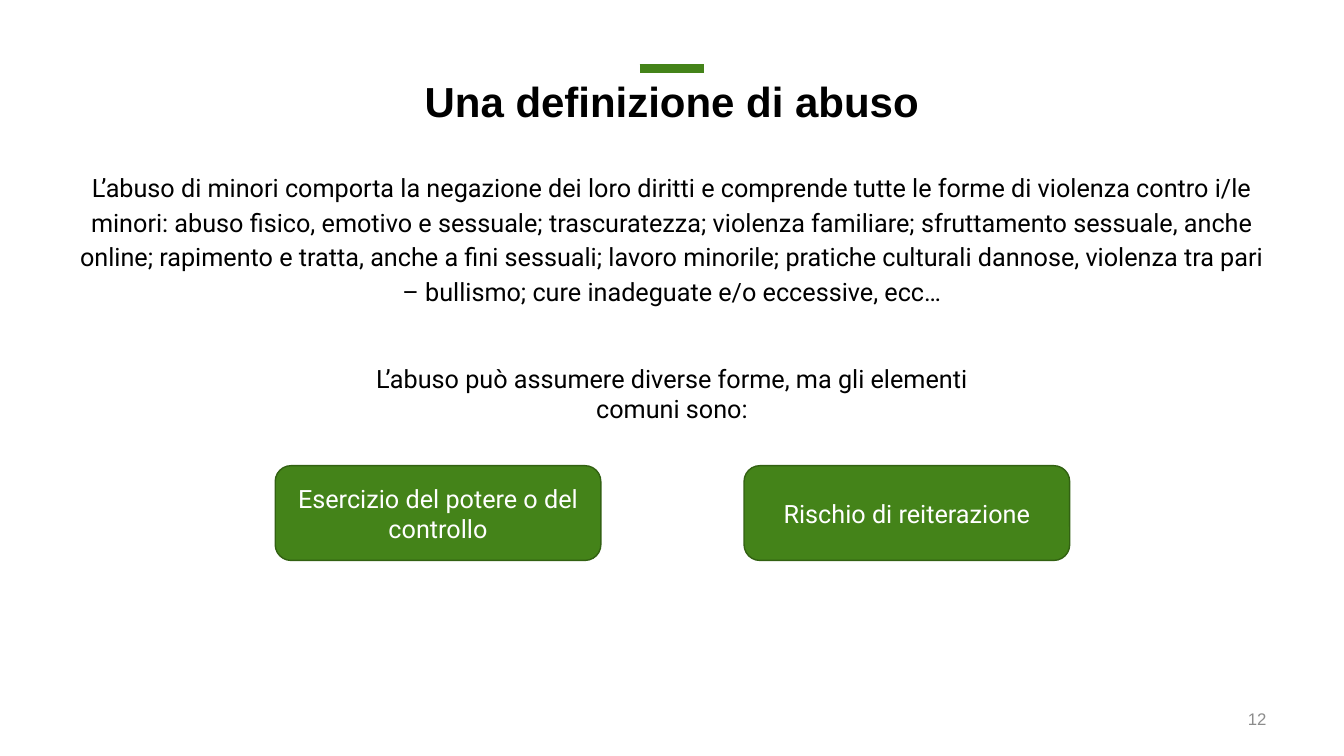
from dataclasses import dataclass

from lxml import etree
from pptx import Presentation
from pptx.dml.color import RGBColor
from pptx.enum import shapes, text
from pptx.oxml.ns import qn
from pptx.util import Inches, Pt


@dataclass(frozen=True)
class Theme:
    green: str = "448319"
    dark_green: str = "326112"
    black: str = "000000"
    white: str = "FFFFFF"
    grey: str = "8C8C8C"
    head_font: str = "Arial"
    body_font: str = "Roboto"
    title_size: int = 30
    body_size: int = 18
    number_size: int = 12


THEME = Theme()
ALIGN = text.PP_ALIGN
ANCHOR = text.MSO_ANCHOR

DEFINITION = (
    "L’abuso di minori comporta la negazione dei loro diritti e comprende tutte le "
    "forme di violenza contro i/le minori: abuso fisico, emotivo e sessuale; "
    "trascuratezza; violenza familiare; sfruttamento sessuale, anche online; "
    "rapimento e tratta, anche a fini sessuali; lavoro minorile; pratiche culturali "
    "dannose, violenza tra pari – bullismo; cure inadeguate e/o eccessive, ecc…"
)
INTRO = "L’abuso può assumere diverse forme, ma gli elementi comuni sono:"
ELEMENTS = ["Esercizio del potere o del controllo", "Rischio di reiterazione"]


def rgb(value):
    return RGBColor.from_string(value)


def write(shape, content, color=THEME.black, size=THEME.body_size,
          font=THEME.body_font, bold=False, align=ALIGN.CENTER, anchor=ANCHOR.TOP):
    """Fill the shape with one formatted paragraph and return it."""
    tf = shape.text_frame
    tf.word_wrap = True
    tf.auto_size = text.MSO_AUTO_SIZE.NONE
    tf.vertical_anchor = anchor
    p = tf.paragraphs[0]
    p.alignment = align
    r = p.add_run()
    r.text = content
    r.font.name = font
    r.font.size = Pt(size)
    r.font.bold = bold
    r.font.color.rgb = rgb(color)
    return p


def add_text(s, box, content, **style):
    sp = s.shapes.add_textbox(*map(Inches, box))
    return sp, write(sp, content, **style)


def add_heading(s, box):
    """Title with a short accent rule centred above it."""
    left, top, width, height = box
    rule_width, rule_y = 0.64, top - 0.08
    rule_left = left + (width - rule_width) / 2
    rule = s.shapes.add_connector(
        shapes.MSO_CONNECTOR.STRAIGHT, Inches(rule_left), Inches(rule_y),
        Inches(rule_left + rule_width), Inches(rule_y))
    rule.line.color.rgb = rgb(THEME.green)
    rule.line.width = Pt(6)
    etree.SubElement(rule.element.spPr, qn("a:effectLst"))

    title = s.shapes.title
    title.left, title.top, title.width, title.height = map(Inches, box)
    p = write(title, "Una definizione di abuso", size=THEME.title_size,
              font=THEME.head_font, bold=True)
    p.line_spacing = 0.9


def add_definition(s, box):
    sp, p = add_text(s, box, DEFINITION)
    sp.text_frame.margin_top = sp.text_frame.margin_bottom = Inches(0.12)
    p.line_spacing = 1.14
    p.space_after = Pt(5)


def add_elements(s, box):
    """Rounded cards spread evenly from edge to edge of the box."""
    left, top, width, height = box
    card_width = 3.23
    step = (width - card_width) / (len(ELEMENTS) - 1)
    for i, label in enumerate(ELEMENTS):
        card = s.shapes.add_shape(
            shapes.MSO_SHAPE.ROUNDED_RECTANGLE, Inches(left + i * step),
            Inches(top), Inches(card_width), Inches(height))
        card.shadow.inherit = False
        card.fill.solid()
        card.fill.fore_color.rgb = rgb(THEME.green)
        card.line.color.rgb = rgb(THEME.dark_green)
        card.line.width = Pt(1)
        write(card, label, color=THEME.white, anchor=ANCHOR.MIDDLE)


def main():
    prs = Presentation()
    prs.slide_width, prs.slide_height = Inches(13.33), Inches(7.5)
    s = prs.slides.add_slide(prs.slide_layouts[5])
    add_heading(s, (0.68, 0.76, 11.97, 0.63))
    add_definition(s, (0.68, 1.55, 11.97, 2.05))
    add_text(s, (3.33, 3.55, 6.67, 0.71), INTRO)
    add_elements(s, (2.73, 4.62, 7.88, 0.94))
    add_text(s, (11.95, 6.98, 0.71, 0.31), "12", color=THEME.grey,
             size=THEME.number_size, font=THEME.head_font,
             align=ALIGN.RIGHT, anchor=ANCHOR.MIDDLE)
    prs.save("out.pptx")


if __name__ == "__main__":
    main()
